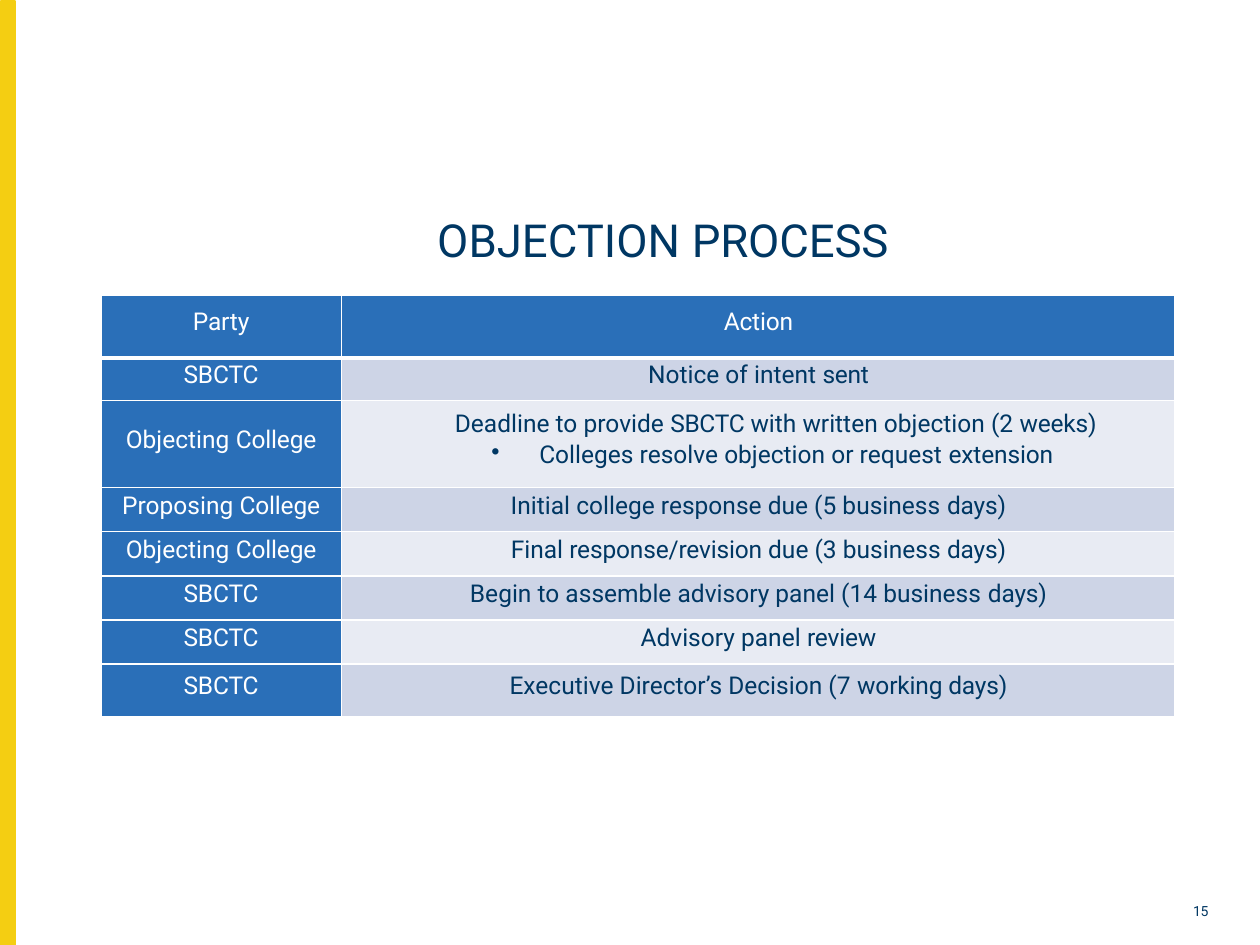
from lxml.etree import SubElement
from pptx import Presentation
from pptx.dml.color import RGBColor
from pptx.enum.shapes import MSO_SHAPE
from pptx.enum.text import MSO_ANCHOR, MSO_AUTO_SIZE, PP_ALIGN
from pptx.oxml.ns import qn
from pptx.util import Inches, Pt

FONT = "Roboto"
NAVY, BLUE, YELLOW, WHITE = "003763", "2A6FB8", "F4CE12", "FFFFFF"
BANDS = ("CDD4E6", "E8EBF3")
COLUMN_WIDTHS = (1.91, 6.61)

# Runs are (text, letter spacing in points).
SBCTC = [("SBCTC", -0.1)]
OBJECTING = [("Objecting ", 0), ("College", -0.1)]
PROPOSING = [("Proposing ", 0), ("College", -0.1)]
DEADLINE = [("Deadline to provide ", 0), ("SBCTC ", -0.2),
            ("with written objection (2", 0), (" weeks)", -0.1)]
RESOLVE = [("Colleges resolve objection or request ", 0), ("extension", -0.1)]

# Row height, top margins of both cells, party, action
ROWS = [
    (0.5, (0.1, 0.1), [("Party", -0.1)], [("Action", -0.1)]),
    (0.34, (0.02, 0.02), SBCTC, [("Notice of intent ", 0), ("sent", -0.2)]),
    (0.69, (0.2, 0.07), OBJECTING, DEADLINE),
    (0.35, (0.03, 0.03), PROPOSING,
     [("Initial college response due (5 business ", 0), ("days)", -0.1)]),
    (0.35, (0.03, 0.03), OBJECTING,
     [("Final ", 0), ("response/revision ", -0.1), ("due (3 business ", 0), ("days)", -0.1)]),
    (0.35, (0.03, 0.03), SBCTC,
     [("Begin to assemble advisory panel (14 business ", 0), ("days)", -0.1)]),
    (0.35, (0.03, 0.03), SBCTC, [("Advisory panel ", 0), ("review", -0.1)]),
    (0.42, (0.06, 0.06), SBCTC,
     [("Executive Director’s Decision (7 ", 0), ("working days)", -0.1)]),
]


def rgb(color):
    return RGBColor.from_string(color)


def write(para, runs, size, color, align=PP_ALIGN.LEFT):
    para.alignment = align
    for text, spacing in runs:
        span = para.add_run()
        span.text = text
        span.font.name = FONT
        span.font.size = Pt(size)
        span.font.bold = False
        span.font.color.rgb = rgb(color)
        if spacing:
            span.font._element.set("spc", str(round(spacing * 100)))


def indent(para, left, first=0):
    properties = para._p.get_or_add_pPr()
    properties.set("marL", str(Inches(left)))
    properties.set("indent", str(Inches(first)))
    return properties


def add_bullet(para, left, hanging):
    properties = indent(para, left, -hanging)
    SubElement(properties, qn("a:buChar"), char="•")
    tabs = SubElement(properties, qn("a:tabLst"))
    SubElement(tabs, qn("a:tab"), pos=str(Inches(left)), algn="l")


def set_insets(frame, top):
    frame.margin_left = frame.margin_right = frame.margin_bottom = 0
    frame.margin_top = Inches(top)
    frame.vertical_anchor = MSO_ANCHOR.TOP


def set_borders(cell, top, bottom):
    properties = cell._tc.get_or_add_tcPr()
    for side, width in (("L", 1), ("R", 1), ("T", top), ("B", bottom)):
        line = SubElement(properties, qn(f"a:ln{side}"), w=str(Pt(width)))
        SubElement(SubElement(line, qn("a:solidFill")), qn("a:srgbClr"), val=WHITE)


def add_side_bar(page):
    bar = page.shapes.add_shape(MSO_SHAPE.RECTANGLE, Inches(0.01), Inches(0.01),
                                Inches(0.11), Inches(7.49))
    bar.shadow.inherit = False
    bar.fill.solid()
    bar.fill.fore_color.rgb = rgb(YELLOW)
    bar.line.color.rgb = rgb(YELLOW)
    bar.line.width = Pt(1)


def add_title(page):
    title = page.shapes.title
    title.left, title.top = Inches(0.67), Inches(1.66)
    title.width, title.height = Inches(8.65), Inches(0.57)
    frame = title.text_frame
    frame.auto_size = MSO_AUTO_SIZE.NONE
    set_insets(frame, 0.02)
    para = frame.paragraphs[0]
    indent(para, 2.8)
    write(para, [("OBJECTION ", 0), ("PROCESS", -0.1)], 26, NAVY)


def add_page_number(page):
    box = page.shapes.add_textbox(Inches(9.46), Inches(7.15), Inches(0.22), Inches(0.16))
    box.text_frame.word_wrap = True
    set_insets(box.text_frame, 0.01)
    para = box.text_frame.paragraphs[0]
    indent(para, 0.01)
    write(para, [("15", -0.2)], 8, NAVY)


def fill_cell(cell, row, column, top, runs):
    is_label = row == 0 or column == 0
    set_borders(cell, 3 if row == 1 else 1, 3 if row == 0 else 1)
    cell.fill.solid()
    cell.fill.fore_color.rgb = rgb(BLUE if is_label else BANDS[(row - 1) % 2])
    set_insets(cell, top)
    para = cell.text_frame.paragraphs[0]
    if runs is DEADLINE:
        indent(para, 0.9)
        write(para, runs, 14, NAVY)
        detail = cell.text_frame.add_paragraph()
        add_bullet(detail, 1.57, 0.38)
        detail.space_before = Pt(1.2)
        write(detail, RESOLVE, 14, NAVY)
    else:
        indent(para, 0.01 * column)
        write(para, runs, 14, WHITE if is_label else NAVY, PP_ALIGN.CENTER)


def add_process_table(page):
    height = sum(row[0] for row in ROWS)
    table = page.shapes.add_table(len(ROWS), len(COLUMN_WIDTHS), Inches(0.8), Inches(2.34),
                                  Inches(sum(COLUMN_WIDTHS)), Inches(height)).table
    table.horz_banding = False
    for column, width in zip(table.columns, COLUMN_WIDTHS):
        column.width = Inches(width)
    for row, (row_height, tops, *texts) in enumerate(ROWS):
        table.rows[row].height = Inches(row_height)
        for column, (top, runs) in enumerate(zip(tops, texts)):
            fill_cell(table.cell(row, column), row, column, top, runs)


def main():
    deck = Presentation()
    deck.slide_width, deck.slide_height = Inches(10), Inches(7.5)
    page = deck.slides.add_slide(deck.slide_layouts[5])
    add_side_bar(page)
    add_title(page)
    add_page_number(page)
    add_process_table(page)
    deck.save("out.pptx")


if __name__ == "__main__":
    main()
